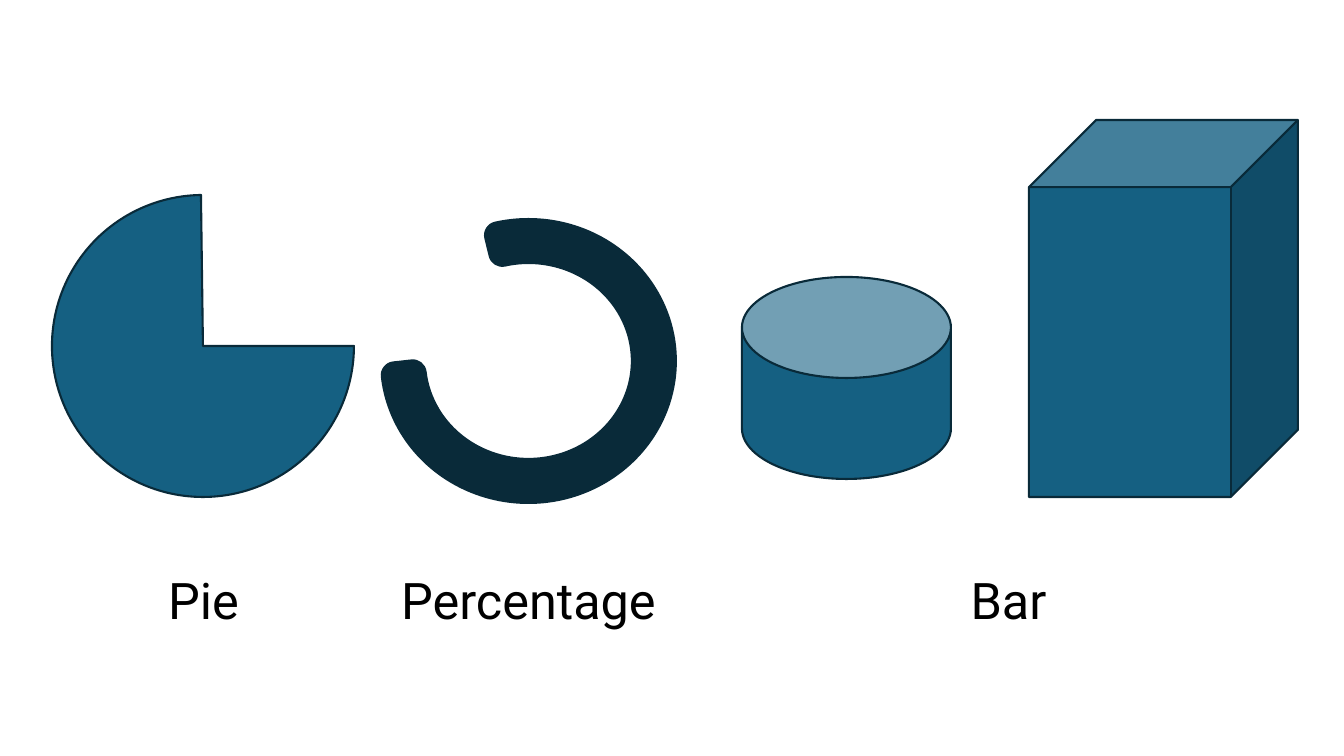
from pptx import Presentation
from pptx.dml.color import RGBColor
from pptx.enum.shapes import MSO_SHAPE as SHAPE
from pptx.enum.text import MSO_AUTO_SIZE as AUTO, PP_ALIGN as ALIGN
from pptx.oxml.ns import qn
from pptx.util import Pt
from lxml.etree import SubElement

PX = 914400 / 100.8
COLORS = {"fill": "156082", "line": "092A39", "text": "000000"}


def px(*lengths):
    return [round(n * PX) for n in lengths]


def color(name):
    return RGBColor.from_string(COLORS[name])


prs = Presentation()
prs.slide_width, prs.slide_height = px(1344, 756)
s = prs.slides.add_slide(prs.slide_layouts[6])

figures = [
    (SHAPE.PIE, (52, 195, 302, 302), (0, 161.55), True, 1.5),
    (SHAPE.CAN, (742, 277, 209, 202), (0.5,), True, 1.5),
    (SHAPE.CUBE, (1029, 120, 269, 377), (), True, 1.5),
    (SHAPE.BLOCK_ARC, (394, 232, 269, 258), (153.84, 104.33, 0.07), False, 20),
]
for kind, box, adjustments, filled, width in figures:
    sp = s.shapes.add_shape(kind, *px(*box))
    sp.shadow.inherit = False
    for i, value in enumerate(adjustments):
        sp.adjustments[i] = value
    if filled:
        sp.fill.solid()
        sp.fill.fore_color.rgb = color("fill")
    else:
        sp.fill.background()
    sp.line.color.rgb = color("line")
    sp.line.width = Pt(width)
    SubElement(sp.line._get_or_add_ln(), qn("a:round"))

for label, left, width in [("Pie", 117, 173), ("Percentage", 373, 311), ("Bar", 853, 311)]:
    tf = s.shapes.add_textbox(*px(left, 564, width, 72)).text_frame
    tf.word_wrap = True
    tf.auto_size = AUTO.SHAPE_TO_FIT_TEXT
    p = tf.paragraphs[0]
    p.alignment = ALIGN.CENTER
    r = p.add_run()
    r.text = label
    r.font.name = "Roboto"
    r.font.size = Pt(36)
    r.font.color.rgb = color("text")

prs.save("out.pptx")
